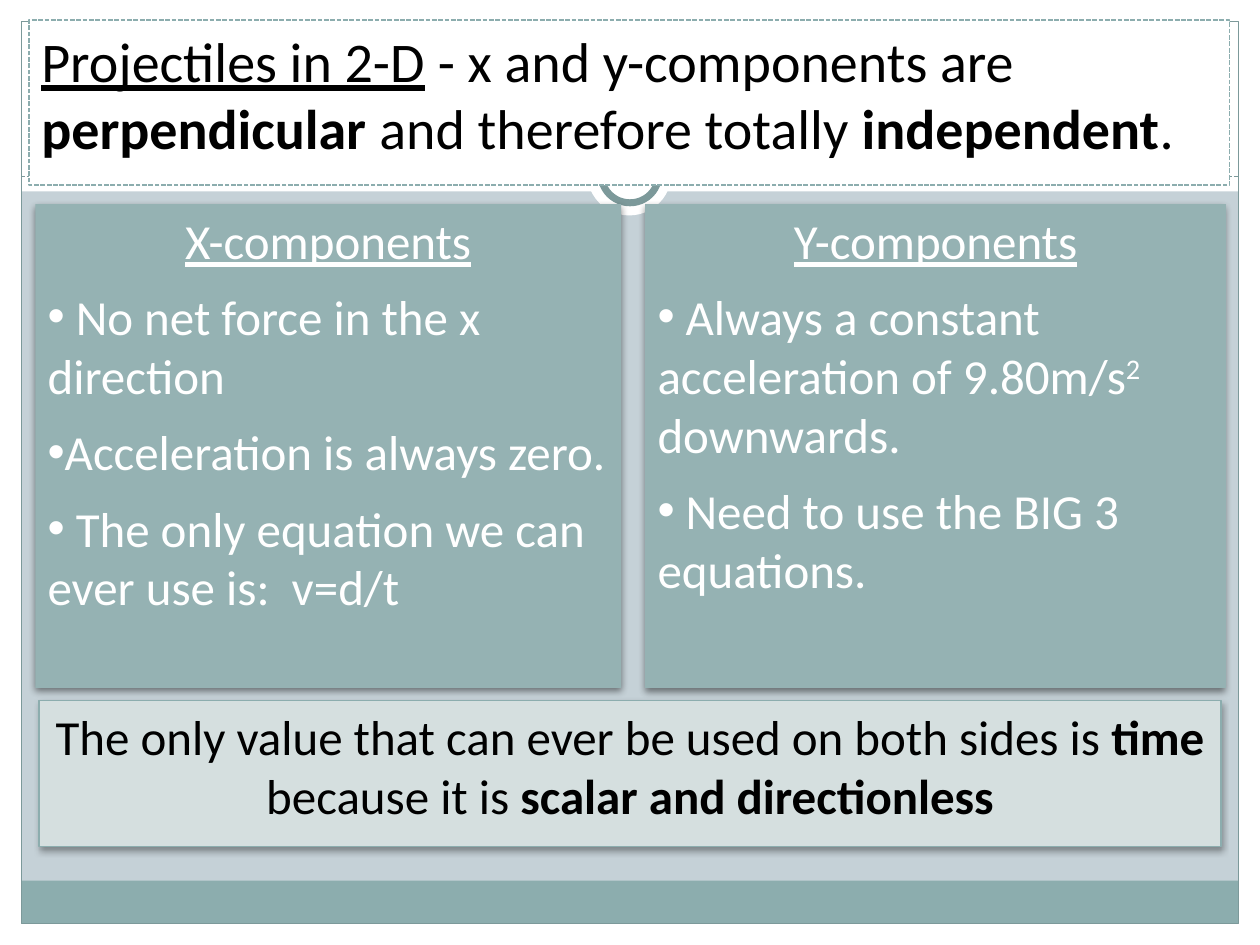
from collections import namedtuple

from lxml import etree
from pptx import Presentation
from pptx import util as u
from pptx.dml.color import RGBColor
from pptx.enum import dml, shapes, text
from pptx.oxml.ns import qn

COLORS = {
    "backdrop": "C5D1D7", "white": "FFFFFF", "black": "000000",
    "band": "8CADAE", "rule": "7C999A", "column": "95B2B3", "summary": "D5DFDF",
}
COLUMNS, ROWS = 1000, 750
CELL = u.Inches(0.01)
MARGIN = 17
Box = namedtuple("Box", "left top width height")


def color(name):
    """Return the palette colour called name."""
    return RGBColor.from_string(COLORS[name])


def outline(line, name, width, dashed=False):
    """Style a border or rule."""
    line.color.rgb = color(name)
    line.width = u.Pt(width)
    if dashed:
        line.dash_style = dml.MSO_LINE.SQUARE_DOT


def panel(slide, box, fill=None, rule=None, width=0.75, dashed=False, oval=False):
    """Draw a flat rectangle or ellipse that fills the box."""
    kind = shapes.MSO_SHAPE.OVAL if oval else shapes.MSO_SHAPE.RECTANGLE
    area = slide.shapes.add_shape(kind, *(side * CELL for side in box))
    area.shadow.inherit = False
    if fill:
        area.fill.solid()
        area.fill.fore_color.rgb = color(fill)
    else:
        area.fill.background()
    if rule:
        outline(area.line, rule, width, dashed)
    else:
        area.line.fill.background()
    return area


def drop_shadow(area, opacity):
    """Cast a soft shadow straight down."""
    effects = area._element.spPr.find(qn("a:effectLst"))
    shadow = etree.SubElement(
        effects, qn("a:outerShdw"), blurRad=str(u.Pt(4)), dist=str(u.Pt(2)),
        dir="5400000", algn="ctr", rotWithShape="0")
    black = etree.SubElement(shadow, qn("a:srgbClr"), val=COLORS["black"])
    etree.SubElement(black, qn("a:alpha"), val=str(opacity * 1000))


def write(paragraph, parts, size, ink, centred=False, bullet=False):
    """Fill a paragraph with (wording, style) parts."""
    paragraph.alignment = text.PP_ALIGN.CENTER if centred else text.PP_ALIGN.LEFT
    paragraph.space_after = u.Pt(10)
    if bullet:
        layout = paragraph._p.get_or_add_pPr()
        layout.set("marL", "0")
        layout.set("indent", "0")
        etree.SubElement(layout, qn("a:buFont"), typeface="Arial")
        etree.SubElement(layout, qn("a:buChar"), char="•")
    for wording, style in parts:
        run = paragraph.add_run()
        run.text = wording
        run.font.name = "Calibri"
        run.font.size = u.Pt(size)
        run.font.color.rgb = color(ink)
        run.font.bold = style == "bold"
        run.font.underline = style == "underline"
        if style == "super":
            run.font._element.set("baseline", "30000")


def open_text(area):
    """Prepare wrapped text that starts at the top of an area."""
    frame = area.text_frame
    frame.word_wrap = True
    frame.vertical_anchor = text.MSO_ANCHOR.TOP
    return frame


def ring(slide, center, middle):
    """Place the circle that hangs on the header rule."""
    for size, rule in ((67, None), (46, "rule")):
        box = Box(center - size / 2, middle - size / 2, size, size)
        panel(slide, Box(*map(int, box)), "white", rule, 4, oval=True)


def frame_page(slide, page):
    """Draw the white margins, footer band, border and header rule."""
    right, bottom = page.width - MARGIN, page.height - MARGIN
    inner = Box(MARGIN, MARGIN, right - MARGIN, bottom - MARGIN)
    for margin in (Box(0, bottom, page.width, MARGIN),
                   Box(0, 0, page.width, 152),
                   Box(0, 0, MARGIN, page.height),
                   Box(right, 0, MARGIN, page.height)):
        panel(slide, margin, "white")
    panel(slide, Box(MARGIN, bottom - 34, inner.width, 34), "band")
    panel(slide, inner, rule="rule")
    level = 140
    rule = slide.shapes.add_connector(
        shapes.MSO_CONNECTOR.STRAIGHT,
        MARGIN * CELL, level * CELL, right * CELL, level * CELL)
    outline(rule.line, "rule", 0.75, dashed=True)
    etree.SubElement(rule._element.spPr, qn("a:effectLst"))
    ring(slide, page.width / 2, level - 2)


def heading(slide, box, parts):
    """Place the dashed title panel."""
    area = panel(slide, box, "white", "band", 0.9, dashed=True)
    write(open_text(area).paragraphs[0], parts, 32, "black")


def component(slide, box, title, points):
    """Place one column with an underlined title and bullet points."""
    area = panel(slide, box, "column")
    drop_shadow(area, 45)
    frame = open_text(area)
    write(frame.paragraphs[0], [(title, "underline")], 28, "white", centred=True)
    for point in points:
        write(frame.add_paragraph(), point, 28, "white", bullet=True)


def summary(slide, box, parts):
    """Place the closing statement."""
    area = panel(slide, box, "summary", "band")
    drop_shadow(area, 35)
    write(open_text(area).paragraphs[0], parts, 28, "black", centred=True)


def main():
    """Build and save the slide."""
    deck = Presentation()
    deck.slide_width, deck.slide_height = COLUMNS * CELL, ROWS * CELL
    slide = deck.slides.add_slide(deck.slide_layouts[6])
    slide.background.fill.solid()
    slide.background.fill.fore_color.rgb = color("backdrop")
    frame_page(slide, Box(0, 0, COLUMNS, ROWS))
    heading(slide, Box(23, 16, 953, 131), [
        ("Projectiles in 2-D", "underline"),
        (" - x and y-components are ", None),
        ("perpendicular", "bold"),
        (" and therefore totally ", None),
        ("independent", "bold"),
        (".", None),
    ])
    component(slide, Box(28, 162, 465, 384), "X-components", [
        [(" No net force in the x direction", None)],
        [("Acceleration is always zero.", None)],
        [(" The only equation we can ever use is:  v=d/t", None)],
    ])
    component(slide, Box(512, 162, 461, 384), "Y-components", [
        [(" Always a constant acceleration of 9.80m/s", None),
         ("2", "super"), (" downwards.", None)],
        [(" Need to use the BIG 3 equations.", None)],
    ])
    summary(slide, Box(31, 556, 938, 116), [
        ("The only value that can ever be used on both sides is ", None),
        ("time", "bold"),
        (" because it is ", None),
        ("scalar and directionless", "bold"),
    ])
    deck.save("out.pptx")


if __name__ == "__main__":
    main()
